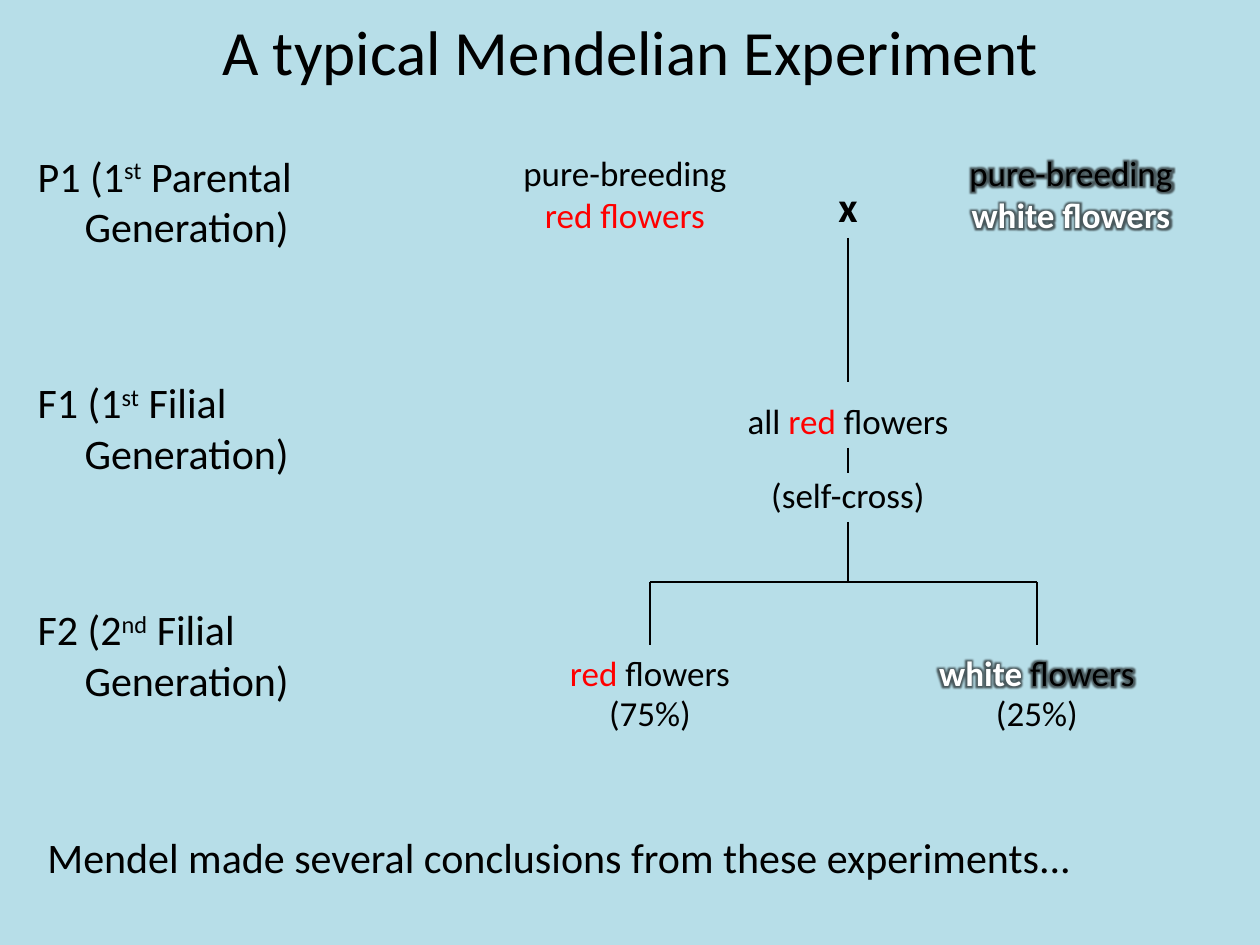
import collections

import lxml.etree
import pptx
import pptx.dml.color
import pptx.enum.shapes
import pptx.enum.text
import pptx.oxml
import pptx.oxml.ns
import pptx.util

PX = 914400 // 126
Theme = collections.namedtuple("Theme", "back ink red white font title body label line")
theme = Theme(back="B7DEE8", ink="000000", red="FF0000", white="FFFFFF",
              font="Calibri", title=36, body=24, label=20, line=0.75)
rgb = pptx.dml.color.RGBColor.from_string
qn = pptx.oxml.ns.qn
align = pptx.enum.text.PP_ALIGN
fit = pptx.enum.text.MSO_AUTO_SIZE

deck = pptx.Presentation()
deck.slide_width, deck.slide_height = pptx.util.Inches(10), pptx.util.Inches(7.5)
slide = deck.slides.add_slide(deck.slide_layouts[1])
slide.background.fill.solid()
slide.background.fill.fore_color.rgb = rgb(theme.back)


def place(shape, left, top, width, height):
    shape.left, shape.top = left * PX, top * PX
    shape.width, shape.height = width * PX, height * PX


def style(run, size, color=theme.ink, bold=False):
    run.font.name, run.font.size, run.font.bold = theme.font, pptx.util.Pt(size), bold
    run.font.color.rgb = rgb(color)


# Title
title = slide.shapes.title
place(title, 25, 16, 1211, 69)
title.text_frame.text = "A typical Mendelian Experiment"
title.text_frame.auto_size = fit.NONE
title.text_frame.vertical_anchor = pptx.enum.text.MSO_ANCHOR.MIDDLE
title.text_frame.paragraphs[0].alignment = align.CENTER
style(title.text_frame.paragraphs[0].runs[0], theme.title)

# Generations, with a hanging indent and no bullets
body = slide.placeholders[1]
place(body, 25, 86, 377, 814)
frame = body.text_frame
frame.auto_size = fit.NONE
frame.margin_top = 64 * PX
stages = [("P1 (1", "st", " Parental Generation)"),
          ("F1 (1", "st", " Filial Generation)"),
          ("F2 (2", "nd", " Filial Generation)")]
for row, stage in enumerate(stages):
    para = frame.add_paragraph() if row else frame.paragraphs[0]
    props = para._p.get_or_add_pPr()
    props.set("marL", str(47 * PX))
    props.set("indent", str(-47 * PX))
    lxml.etree.SubElement(props, qn("a:buNone"))
    para.space_before = pptx.util.Pt(72 if row else 0)
    for spot, text in enumerate(stage):
        run = para.add_run()
        run.text = text
        style(run, theme.body)
        if spot == 1:
            run._r.get_or_add_rPr().set("baseline", "30000")

# Labels: key, place, size, glow, then lines of (text, colour, bold)
ink, red, white = (theme.ink, False), (theme.red, False), (theme.white, True)
labels = [
    ("red parent", (491, 145, 268, 97), theme.label, False,
     [[("pure-breeding", *ink)], [("red flowers", *red)]]),
    ("white parent", (937, 145, 268, 97), theme.label, True,
     [[("pure-breeding", *ink)], [("white flowers", *white)]]),
    ("cross", (808, 174, 80, 64), theme.body, False, [[("x", theme.ink, True)]]),
    ("first", (709, 393, 278, 55), theme.label, False,
     [[("all ", *ink), ("red", *red), (" flowers", *ink)]]),
    ("self", (709, 467, 278, 55), theme.label, False, [[("(self-cross)", *ink)]]),
    ("red", (511, 645, 278, 55), theme.label, False,
     [[("red", *red), (" flowers", *ink)]]),
    ("white", (898, 645, 278, 55), theme.label, True,
     [[("white", *white), (" flowers", *ink)]]),
    ("red share", (511, 685, 278, 55), theme.label, False, [[("(75%)", *ink)]]),
    ("white share", (898, 685, 278, 55), theme.label, False, [[("(25%)", *ink)]]),
    ("closing", (35, 825, 1071, 63), theme.body, False,
     [[("Mendel made several conclusions from these experiments...", *ink)]]),
]
boxes = {}
for key, area, size, glow, lines in labels:
    box = boxes[key] = slide.shapes.add_textbox(0, 0, 0, 0)
    place(box, *area)
    frame = box.text_frame
    frame.word_wrap = True
    frame.auto_size = fit.SHAPE_TO_FIT_TEXT
    for row, parts in enumerate(lines):
        para = frame.add_paragraph() if row else frame.paragraphs[0]
        para.alignment = align.LEFT if key == "closing" else align.CENTER
        for text, color, bold in parts:
            run = para.add_run()
            run.text = text
            style(run, size, color, bold)
            if glow:
                halo = pptx.oxml.parse_xml(
                    f'<a:effectLst {pptx.oxml.ns.nsdecls("a")}><a:glow rad="88900">'
                    f'<a:srgbClr val="{theme.ink}"><a:alpha val="60000"/></a:srgbClr>'
                    '</a:glow></a:effectLst>')
                run._r.rPr.find(qn("a:solidFill")).addnext(halo)

# Descent lines: start, end, box joined at the start, box joined at the end
links = [
    ((848, 238), (848, 382), "cross", None),
    ((848, 448), (848, 473), "first", None),
    ((848, 522), (848, 582), "self", None),
    ((650, 582), (1037, 582), None, None),
    ((650, 582), (650, 645), None, "red"),
    ((1037, 582), (1037, 645), None, "white"),
]
for start, end, above, below in links:
    link = slide.shapes.add_connector(
        pptx.enum.shapes.MSO_CONNECTOR.STRAIGHT, *(n * PX for n in start + end))
    link.line.color.rgb = rgb(theme.ink)
    link.line.width = pptx.util.Pt(theme.line)
    lxml.etree.SubElement(link._element.spPr, qn("a:effectLst"))
    if above:
        link.begin_connect(boxes[above], 2)
    if below:
        link.end_connect(boxes[below], 0)

deck.save("out.pptx")
